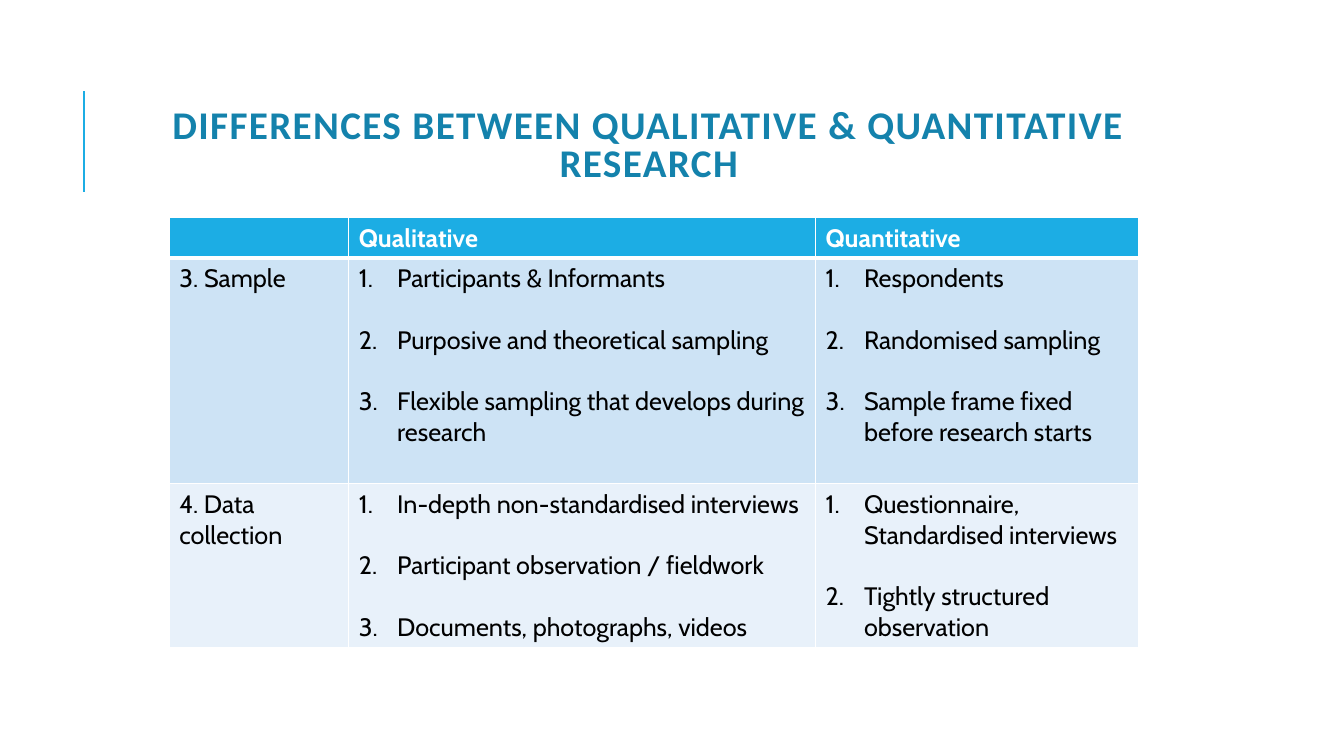
from lxml.etree import SubElement
from pptx import Presentation
from pptx.dml.color import RGBColor
from pptx.enum.shapes import MSO_CONNECTOR
from pptx.enum.text import MSO_ANCHOR, PP_ALIGN
from pptx.oxml.ns import qn
from pptx.util import Inches, Pt

# Content
TITLE = "DIFFERENCES BETWEEN QUALITATIVE & QUANTITATIVE RESEARCH"
HEADINGS = ["", "Qualitative", "Quantitative"]
TOPICS = [
    ("3. Sample",
     ["Participants & Informants", "Purposive and theoretical sampling",
      "Flexible sampling that develops during research"],
     ["Respondents", "Randomised sampling",
      "Sample frame fixed before research starts"]),
    ("4. Data collection",
     ["In-depth non-standardised interviews",
      "Participant observation / fieldwork",
      "Documents, photographs, videos"],
     ["Questionnaire, Standardised interviews",
      "Tightly structured observation"]),
]

# Colours
ACCENT = RGBColor(0x1C, 0xAD, 0xE4)
TITLE_BLUE = RGBColor(0x14, 0x82, 0xAC)
BANDS = [RGBColor(0xCD, 0xE3, 0xF5), RGBColor(0xE8, 0xF1, 0xFA)]
BLACK = RGBColor(0, 0, 0)
WHITE = RGBColor(0xFF, 0xFF, 0xFF)

# Layout in inches
SLIDE_SIZE = (13.33, 7.5)
TITLE_BOX = (1.12, 0.64, 10.63, 1.64)
RULE = (0.83, 1.9, 0.83, 0.9)
TABLE_CORNER = (1.68, 2.16)
COLUMNS = [1.78, 4.63, 3.2]
ROWS = [0.4, 2.24, 1.62]
NUMBER_INDENT = 0.38
ITEM_GAP = 22  # points, one text line


def write(frame, lines, font="Cabin", size=18, color=BLACK, bold=False,
          align=PP_ALIGN.LEFT, numbered=False, line_spacing=None, tracking=0):
    frame.word_wrap = True
    for i, line in enumerate(lines):
        para = frame.add_paragraph() if i else frame.paragraphs[0]
        para.alignment = align
        if line_spacing:
            para.line_spacing = line_spacing
        if numbered:
            para.space_before = Pt(ITEM_GAP if i else 0)
            props = para._p.get_or_add_pPr()
            props.set("marL", str(Inches(NUMBER_INDENT)))
            props.set("indent", str(-Inches(NUMBER_INDENT)))
            SubElement(props, qn("a:buFont"), typeface="+mj-lt")
            SubElement(props, qn("a:buAutoNum"), type="arabicPeriod")
        run = para.add_run()
        run.text = line
        run.font.name, run.font.size = font, Pt(size)
        run.font.bold, run.font.color.rgb = bold, color
        if tracking:
            run.font._element.set("spc", str(tracking * 100))


def paint(cell, color, top=1, bottom=1):
    """Give a cell white borders (widths in points) and a solid fill."""
    props = cell._tc.get_or_add_tcPr()
    for side, width in (("L", 1), ("R", 1), ("T", top), ("B", bottom)):
        border = SubElement(props, qn(f"a:ln{side}"), w=str(Pt(width)))
        solid = SubElement(border, qn("a:solidFill"))
        SubElement(solid, qn("a:srgbClr"), val=str(WHITE))
    cell.fill.solid()
    cell.fill.fore_color.rgb = color


prs = Presentation()
prs.slide_width, prs.slide_height = map(Inches, SLIDE_SIZE)
slide = prs.slides.add_slide(prs.slide_layouts[6])

# Accent rule
rule = slide.shapes.add_connector(MSO_CONNECTOR.STRAIGHT, *map(Inches, RULE))
rule.line.color.rgb = ACCENT
rule.line.width = Pt(1.5)
SubElement(rule._element.spPr, qn("a:effectLst"))

# Title
title = slide.shapes.add_textbox(*map(Inches, TITLE_BOX)).text_frame
title.vertical_anchor = MSO_ANCHOR.MIDDLE
write(title, [TITLE], font="Calibri", size=28, color=TITLE_BLUE, bold=True,
      align=PP_ALIGN.CENTER, line_spacing=0.8, tracking=1)

# Comparison table
comparison = slide.shapes.add_table(
    len(ROWS), len(COLUMNS), *map(Inches, TABLE_CORNER),
    Inches(sum(COLUMNS)), Inches(sum(ROWS))).table
for column, width in zip(comparison.columns, COLUMNS):
    column.width = Inches(width)
for row, height in zip(comparison.rows, ROWS):
    row.height = Inches(height)

for c, heading in enumerate(HEADINGS):
    cell = comparison.cell(0, c)
    paint(cell, ACCENT, bottom=3)
    write(cell.text_frame, [heading], color=WHITE, bold=True)

for r, (topic, *lists) in enumerate(TOPICS, start=1):
    for c, items in enumerate([[topic], *lists]):
        cell = comparison.cell(r, c)
        paint(cell, BANDS[r - 1], top=3 if r == 1 else 1)
        write(cell.text_frame, items, numbered=c > 0)

prs.save("out.pptx")
